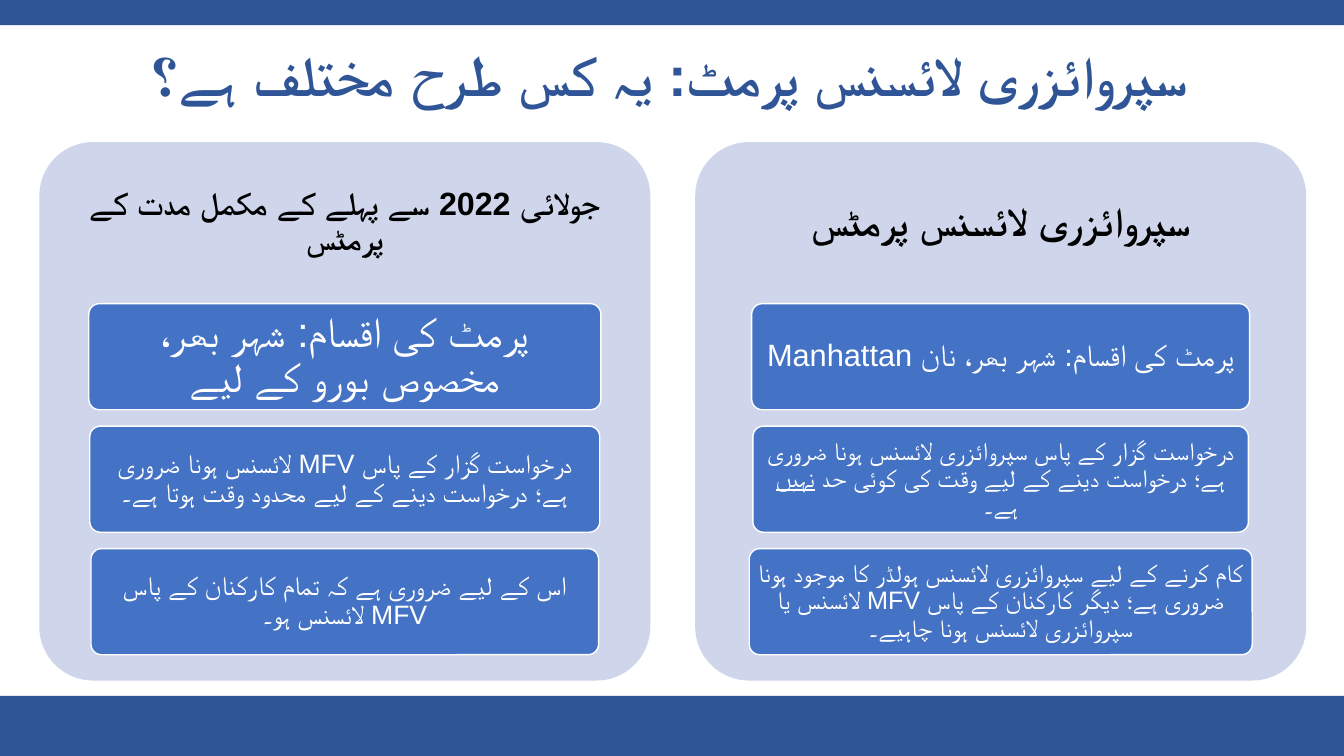
from dataclasses import dataclass

from lxml.etree import SubElement
from pptx import Presentation
from pptx.dml.color import RGBColor
from pptx.enum.shapes import MSO_SHAPE
from pptx.enum.text import MSO_ANCHOR, MSO_AUTO_SIZE, PP_ALIGN
from pptx.oxml.ns import qn
from pptx.util import Pt


@dataclass(frozen=True)
class Theme:
    """Colours, font and type sizes of the slide."""
    font: str = "Arial"
    navy: str = "2F5597"
    card: str = "4472C4"
    panel: str = "CFD5EA"
    white: str = "FFFFFF"
    black: str = "000000"
    title: int = 40
    heading_long: int = 23
    heading_short: int = 29
    card_large: int = 30
    card_medium: int = 22
    card_small: int = 19
    card_smallest: int = 18


THEME = Theme()
SLIDE_W, SLIDE_H = 960, 540
PANEL_TOP, PANEL_W, PANEL_H = 101.5, 436.4, 384.6
HEADING_H = 115.4
CARD_H, CARD_PITCH = 75.8, 87.5

PANELS = [
    (28.1, "جولائی 2022 سے پہلے کے مکمل مدت کے پرمٹس", THEME.heading_long, 7.2, [
        (365.8, THEME.card_large, 5.8,
         ["پرمٹ کی اقسام: شہر بھر، مخصوص بورو کے لیے"]),
        (364.3, THEME.card_small, 3.6,
         ["درخواست گزار کے پاس MFV لائسنس ہونا ضروری ہے؛ "
          "درخواست دینے کے لیے محدود وقت ہوتا ہے۔"]),
        (362.6, THEME.card_small, 3.6,
         ["اس کے لیے ضروری ہے کہ تمام کارکنان کے پاس MFV لائسنس ہو۔"]),
    ]),
    (496.6, "سپروائزری لائسنس پرمٹس", THEME.heading_short, 8.6, [
        (355.7, THEME.card_medium, 4.3,
         ["پرمٹ کی اقسام: شہر بھر، نان Manhattan"]),
        (354, THEME.card_smallest, 3.6,
         ["درخواست گزار کے پاس سپروائزری لائسنس ہونا ضروری ہے؛ "
          "درخواست دینے کے لیے وقت کی کوئی حد ", "نہیں", " ہے۔"]),
        (359.3, THEME.card_smallest, 3.6,
         ["کام کرنے کے لیے سپروائزری لائسنس ہولڈر کا موجود ہونا ضروری ہے؛ "
          "دیگر کارکنان کے پاس MFV لائسنس یا سپروائزری لائسنس ہونا چاہیے۔"]),
    ]),
]


def write_text(tf, runs, size, color, bold=False, inset=3.6):
    """Write centred right-to-left runs, underlining every second one."""
    tf.word_wrap = True
    tf.auto_size = MSO_AUTO_SIZE.NONE
    tf.vertical_anchor = MSO_ANCHOR.MIDDLE
    tf.margin_left = tf.margin_right = Pt(inset)
    tf.margin_top = tf.margin_bottom = Pt(inset * 0.8)
    p = tf.paragraphs[0]
    p.alignment = PP_ALIGN.CENTER
    p.line_spacing = 0.9
    p._p.get_or_add_pPr().set("rtl", "1")
    for i, text in enumerate(runs):
        r = p.add_run()
        r.text = text
        r.font.size = Pt(size)
        r.font.bold = bold
        r.font.name = THEME.font
        r.font.color.rgb = RGBColor.from_string(color)
        if i % 2:
            r.font.underline = True
        SubElement(r._r.rPr, qn("a:cs"), typeface=THEME.font)


def add_block(s, shape, left, top, width, height, fill, line=None):
    """Add a filled shape, outlined only when a line colour is given."""
    sp = s.shapes.add_shape(shape, Pt(left), Pt(top), Pt(width), Pt(height))
    sp.shadow.inherit = False
    sp.fill.solid()
    sp.fill.fore_color.rgb = RGBColor.from_string(fill)
    if line:
        sp.line.color.rgb = RGBColor.from_string(line)
        sp.line.width = Pt(1)
    else:
        sp.line.fill.background()
    if shape == MSO_SHAPE.ROUNDED_RECTANGLE:
        sp.adjustments[0] = 0.1
    return sp


def add_title(s, text):
    """Place and format the title placeholder."""
    sp = s.shapes.title
    sp.left, sp.top, sp.width, sp.height = Pt(-9.4), Pt(28.8), Pt(975), Pt(54)
    write_text(sp.text_frame, [text], THEME.title, THEME.navy, bold=True)


def add_panel(s, left, heading, size, inset, cards):
    """Add a panel with its heading and a centred stack of cards."""
    add_block(s, MSO_SHAPE.ROUNDED_RECTANGLE, left, PANEL_TOP, PANEL_W, PANEL_H,
              THEME.panel)
    box = s.shapes.add_textbox(Pt(left), Pt(PANEL_TOP), Pt(PANEL_W), Pt(HEADING_H))
    write_text(box.text_frame, [heading], size, THEME.black, True, inset)
    for i, (width, card_size, card_inset, runs) in enumerate(cards):
        sp = add_block(s, MSO_SHAPE.ROUNDED_RECTANGLE, left + (PANEL_W - width) / 2,
                       PANEL_TOP + HEADING_H + i * CARD_PITCH, width, CARD_H,
                       THEME.card, THEME.white)
        write_text(sp.text_frame, runs, card_size, THEME.white, inset=card_inset)


def main():
    """Build and save the slide."""
    prs = Presentation()
    prs.slide_width, prs.slide_height = Pt(SLIDE_W), Pt(SLIDE_H)
    s = prs.slides.add_slide(prs.slide_layouts[5])
    for top, height in ((0, 18), (497, 43)):
        add_block(s, MSO_SHAPE.RECTANGLE, 0, top, SLIDE_W, height, THEME.navy)
    add_title(s, "سپروائزری لائسنس پرمٹ: یہ کس طرح مختلف ہے؟")
    for panel in PANELS:
        add_panel(s, *panel)
    prs.save("out.pptx")


if __name__ == "__main__":
    main()
